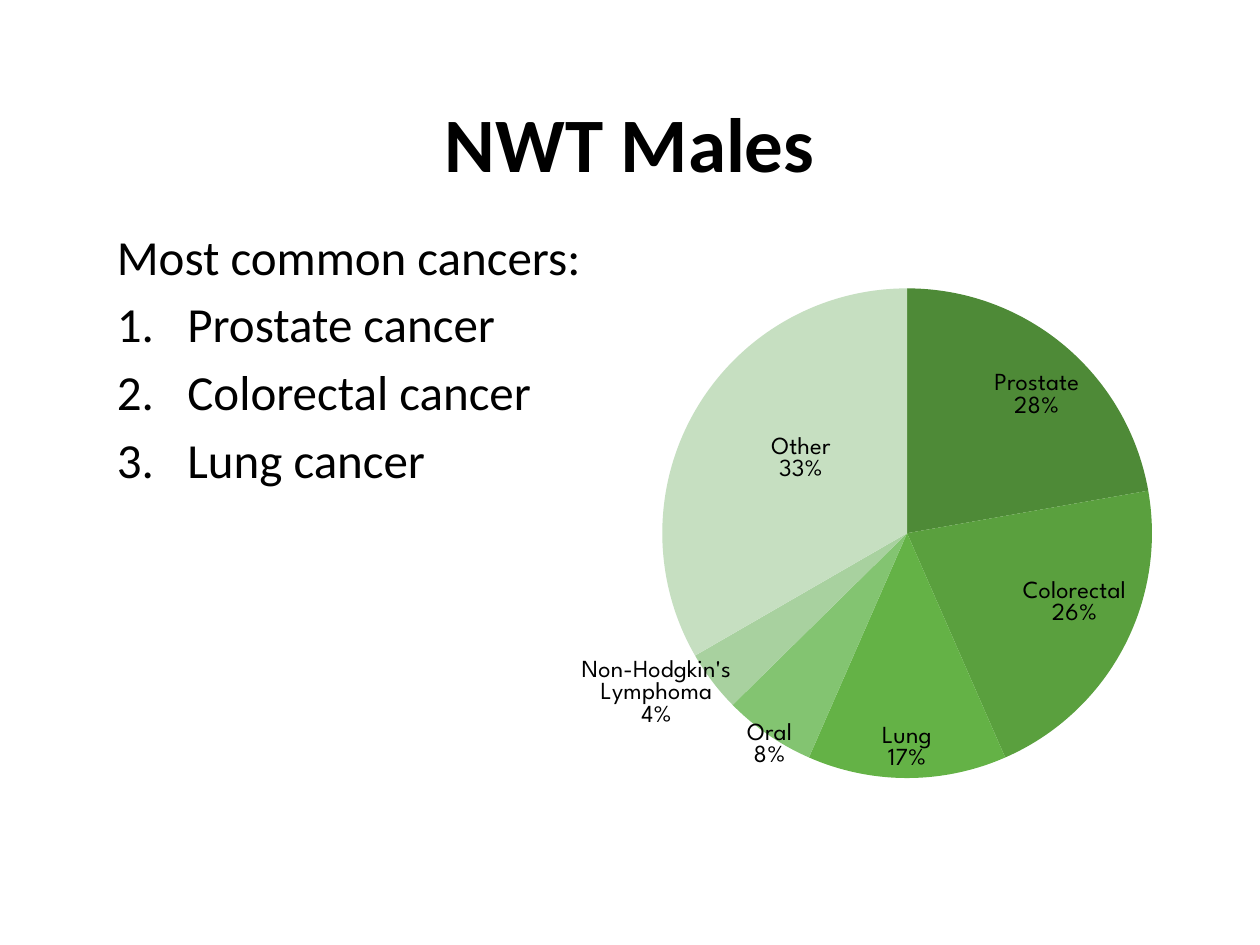
from lxml.etree import SubElement
from pptx import Presentation
from pptx.chart.data import CategoryChartData
from pptx.dml.color import RGBColor
from pptx.enum.chart import XL_CHART_TYPE, XL_LABEL_POSITION
from pptx.enum.text import MSO_ANCHOR, PP_ALIGN
from pptx.oxml.ns import qn
from pptx.util import Inches, Pt

BLACK = RGBColor(0x00, 0x00, 0x00)
GREENS = [
    RGBColor(0x4E, 0x8A, 0x37),
    RGBColor(0x5A, 0xA0, 0x3E),
    RGBColor(0x64, 0xB2, 0x46),
    RGBColor(0x83, 0xC4, 0x71),
    RGBColor(0xA8, 0xD1, 0x9F),
    RGBColor(0xC6, 0xDF, 0xC1),
]
SLICES = [
    ("Prostate", 22, "28%", (0.06, -0.07)),
    ("Colorectal", 21, "26%", (0.07, 0.02)),
    ("Lung", 13, "17%", (0, 0.15)),
    ("Oral", 6, "8%", (-0.08, 0.18)),
    ("Non-Hodgkin's Lymphoma", 4, None, (-0.18, 0.14)),
    ("Other", 33, None, (0, -0.02)),
]
FLAGS = {"showVal": "0", "showCatName": "1", "showPercent": "1"}


def style(font, name, size, bold=False):
    font.name, font.size, font.bold = name, Pt(size), bold
    font.color.rgb = BLACK


def write(para, text, font="Calibri", size=28, bold=False, align=None, gap=None):
    run = para.add_run()
    run.text = text
    style(run.font, font, size, bold)
    para.alignment = align
    para.space_before = gap


def layout(**values):
    def fill(node):
        manual = SubElement(node, qn("c:manualLayout"))
        for key, value in values.items():
            SubElement(manual, qn(f"c:{key}")).set("val", str(value))
        return node
    return fill


class Deck:
    face = "League Spartan"

    def __init__(self):
        self.prs = Presentation()
        self.prs.slide_width, self.prs.slide_height = Inches(10), Inches(7.5)
        self.slide = self.prs.slides.add_slide(self.prs.slide_layouts[5])

    def area(self, left, top, width, height):
        wide, high = self.prs.slide_width, self.prs.slide_height
        return int(left * wide), int(top * high), int(width * wide), int(height * high)

    def title(self, text, *box):
        shape = self.slide.shapes.title
        shape.left, shape.top, shape.width, shape.height = self.area(*box)
        frame = shape.text_frame
        frame.vertical_anchor = MSO_ANCHOR.MIDDLE
        write(frame.paragraphs[0], text, size=44, bold=True, align=PP_ALIGN.CENTER)

    def list(self, head, items, *box):
        frame = self.slide.shapes.add_textbox(*self.area(*box)).text_frame
        frame.word_wrap = True
        write(frame.paragraphs[0], head, gap=Pt(5))
        for item in items:
            para = frame.add_paragraph()
            write(para, item, gap=Pt(5))
            props = para._p.get_or_add_pPr()
            props.set("marL", str(Inches(0.56)))
            props.set("indent", str(Inches(-0.56)))
            SubElement(props, qn("a:buFont")).set("typeface", "+mj-lt")
            SubElement(props, qn("a:buAutoNum")).set("type", "arabicPeriod")

    def pie(self, slices, *box):
        data = CategoryChartData()
        data.categories = [row[0] for row in slices]
        data.add_series("Series 1", [row[1] for row in slices])
        chart = self.slide.shapes.add_chart(
            XL_CHART_TYPE.PIE, *self.area(*box), data).chart
        chart.has_title = chart.has_legend = False
        style(chart.font, self.face, 18)
        area = chart._chartSpace.chart.plotArea
        for old in area.findall(qn("c:layout")):
            area.remove(old)
        place = layout(layoutTarget="inner", xMode="edge", yMode="edge",
                       x=0.26, y=0.11, w=0.6, h=0.79)
        area.insert(0, place(SubElement(area, qn("c:layout"))))
        plot = chart.plots[0]
        plot.vary_by_categories = True
        plot.has_data_labels = True
        labels = plot.data_labels
        labels.show_value = False
        labels.show_category_name = labels.show_percentage = True
        style(labels.font, self.face, 14)
        for i, (name, _, share, shift) in enumerate(slices):
            point = plot.series[0].points[i]
            point.format.fill.solid()
            point.format.fill.fore_color.rgb = GREENS[i]
            point.format.line.fill.background()
            self.label(point.data_label, name, share, shift)

    def label(self, label, name, share, shift):
        label.position = XL_LABEL_POSITION.CENTER
        if share:
            frame = label.text_frame
            write(frame.paragraphs[0], name, font=self.face, size=14)
            write(frame.add_paragraph(), share, font=self.face, size=14)
        else:
            style(label.font, self.face, 14)
        node = label._dLbl
        for key, value in FLAGS.items():
            node.find(qn(f"c:{key}")).set("val", value)
        SubElement(node, qn("c:separator")).text = "\n"
        place = layout(x=shift[0], y=shift[1])
        node.insert(1, place(SubElement(node, qn("c:layout"))))


def main():
    deck = Deck()
    deck.title("NWT Males", 0.05, 0.08, 0.9, 0.14)
    deck.list("Most common cancers:",
              ["Prostate cancer", "Colorectal cancer", "Lung cancer"],
              0.083, 0.233, 0.517, 0.4)
    deck.pie(SLICES, 0.342, 0.233, 0.675, 0.656)
    deck.prs.save("out.pptx")


if __name__ == "__main__":
    main()
